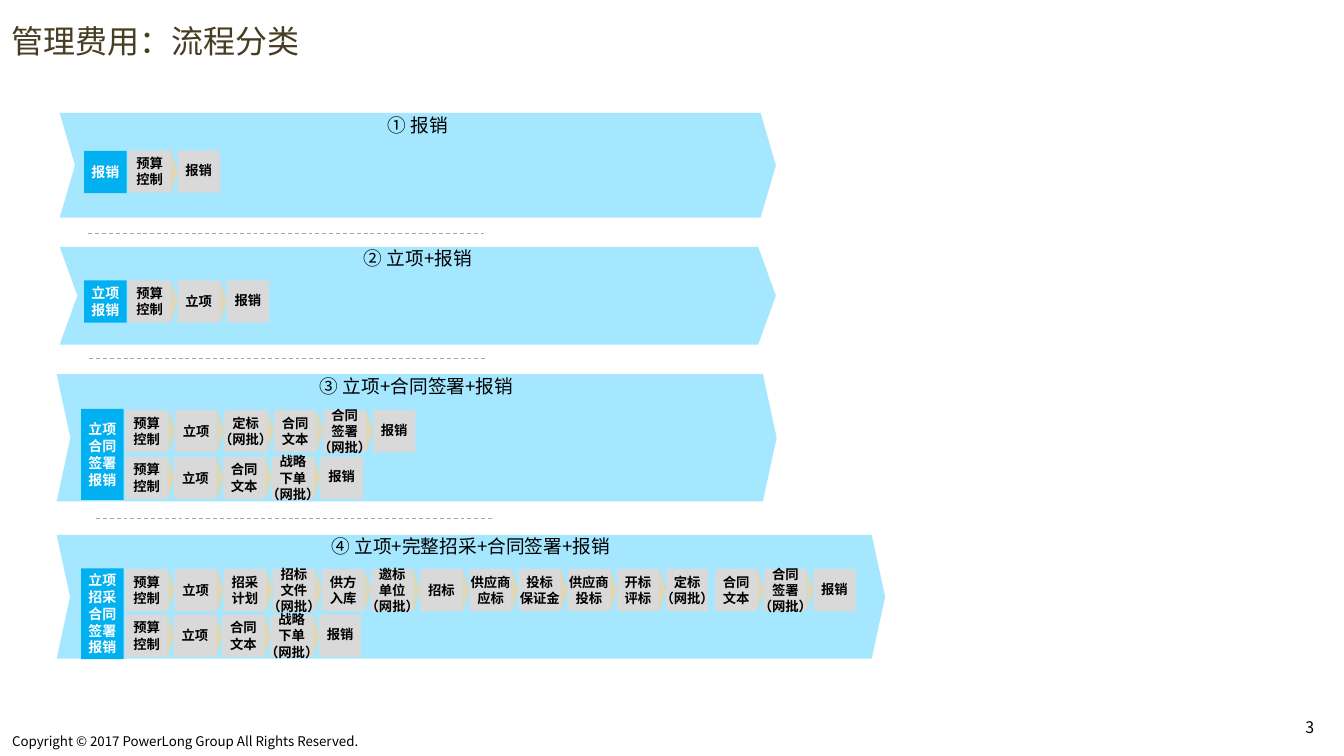
from dataclasses import dataclass

from lxml import etree
from pptx import Presentation
from pptx.dml.color import RGBColor
from pptx.enum.dml import MSO_LINE
from pptx.enum.shapes import MSO_CONNECTOR, MSO_SHAPE as Shape
from pptx.enum.text import MSO_ANCHOR as Anchor, PP_ALIGN as Align
from pptx.oxml.ns import qn
from pptx.util import Cm, Pt

FONT = "Noto Sans CJK SC"
BLACK = RGBColor(0x00, 0x00, 0x00)
WHITE = RGBColor(0xFF, 0xFF, 0xFF)
BROWN = RGBColor(0x47, 0x3D, 0x22)
PALE_BLUE = RGBColor(0xA5, 0xE7, 0xFF)
BLUE = RGBColor(0x00, 0xB0, 0xF0)
GREY = RGBColor(0xD9, 0xD9, 0xD9)
SAND = RGBColor(0xE0, 0xD6, 0xB8)
DASH_GREY = RGBColor(0xA6, 0xA6, 0xA6)

SLIDE_WIDTH = 35.56
SLIDE_HEIGHT = SLIDE_WIDTH * 9 / 16
BOX = 1.12          # side of a step box, cm
ARROW = 0.18        # thickness of the arrow between steps
LABEL_INDENT = 0.65
STEP_INDENT = 1.17


@dataclass
class Row:
    """A chain of steps; no arrow follows the steps listed in gaps."""
    top: float
    pitch: float
    steps: list[str]
    gaps: tuple[int, ...] = ()


@dataclass
class Band:
    title: str
    left: float
    top: float
    width: float
    height: float
    notch: float
    label: str
    label_top: float
    label_height: float
    rows: list[Row]


@dataclass
class Divider:
    left: float
    top: float


BUDGET, CONTRACT, SIGN = "预算\n控制", "合同\n文本", "合同\n签署\n（网批）"
AWARD = "定标\n（网批）"
STRATEGIC = [BUDGET, "立项", CONTRACT, "战略\n下单\n（网批）", "报销"]
FULL_TENDER = [
    BUDGET, "立项", "招采\n计划", "招标\n文件\n（网批）", "供方\n入库",
    "邀标\n单位\n（网批）", "招标", "供应商\n应标", "投标\n保证金",
    "供应商\n投标", "开标\n评标", AWARD, CONTRACT, SIGN, "报销",
]

BANDS = [
    Band("① 报销", 1.58, 2.99, 18.95, 2.77, 0.146, "报销", 3.99, BOX,
         [Row(3.98, 1.3, [BUDGET, "报销"])]),
    Band("② 立项+报销", 1.58, 6.53, 18.95, 2.59, 0.181, "立项\n报销", 7.42, BOX,
         [Row(7.42, 1.3, [BUDGET, "立项", "报销"])]),
    Band("③ 立项+合同签署+报销", 1.5, 9.9, 19.05, 3.37, 0.108,
         "立项\n合同\n签署\n报销", 10.82, 2.41,
         [Row(10.85, 1.31, [BUDGET, "立项", AWARD, CONTRACT, SIGN, "报销"]),
          Row(12.08, 1.29, STRATEGIC)]),
    Band("④ 立项+完整招采+合同签署+报销", 1.5, 14.15, 21.92, 3.28, 0.108,
         "立项\n招采\n合同\n签署\n报销", 15.04, 2.4,
         [Row(15.06, 1.3, FULL_TENDER, gaps=(FULL_TENDER.index(AWARD),)),
          Row(16.26, 1.28, STRATEGIC)]),
]
DIVIDERS = [Divider(2.34, 6.17), Divider(2.36, 9.49), Divider(2.54, 13.73)]
DIVIDER_WIDTH = 10.49


def write(sp, text: str, *, size: float, color: RGBColor = BLACK,
          bold: bool = False, align=Align.LEFT, anchor=Anchor.TOP,
          spacing: float = 1.0, wrap: bool = True, inset=None) -> None:
    """Fill a shape with one paragraph per line of text."""
    tf = sp.text_frame
    tf.word_wrap = wrap
    tf.vertical_anchor = anchor
    if inset:
        tf.margin_left = tf.margin_right = Cm(inset[0])
        tf.margin_top = tf.margin_bottom = Cm(inset[1])
    for i, line in enumerate(text.split("\n")):
        p = tf.paragraphs[0] if i == 0 else tf.add_paragraph()
        p.alignment = align
        p.line_spacing = spacing
        r = p.add_run()
        r.text = line
        r.font.name, r.font.size, r.font.bold = FONT, Pt(size), bold
        r.font.color.rgb = color
        ea = etree.SubElement(r.font._element, qn("a:ea"))
        ea.set("typeface", FONT)


def add_shape(s, kind: Shape, left: float, top: float, width: float,
              height: float, fill: RGBColor):
    sp = s.shapes.add_shape(kind, Cm(left), Cm(top), Cm(width), Cm(height))
    sp.shadow.inherit = False
    sp.fill.solid()
    sp.fill.fore_color.rgb = fill
    sp.line.fill.background()
    return sp


def add_text(s, text: str, left: float, top: float, width: float,
             height: float, **style) -> None:
    sp = s.shapes.add_textbox(Cm(left), Cm(top), Cm(width), Cm(height))
    write(sp, text, **style)


def draw_row(s, row: Row, left: float) -> None:
    for i, step in enumerate(row.steps):
        sp = add_shape(s, Shape.RECTANGLE, left + i * row.pitch, row.top,
                       BOX, BOX, GREY)
        write(sp, step, size=10, bold=True, align=Align.CENTER,
              anchor=Anchor.MIDDLE, wrap=False,
              spacing=0.8 if step == "报销" else 1.0)
    # Arrows are centred on the gaps between neighbouring boxes
    for i in range(len(row.steps) - 1):
        if i not in row.gaps:
            sp = add_shape(s, Shape.ISOSCELES_TRIANGLE,
                           left + (i + 0.5) * row.pitch,
                           row.top + (BOX - ARROW) / 2, BOX, ARROW, SAND)
            sp.rotation = 90


def draw_band(s, band: Band) -> None:
    sp = add_shape(s, Shape.CHEVRON, band.left, band.top, band.width,
                   band.height, PALE_BLUE)
    sp.adjustments[0] = band.notch
    write(sp, band.title, size=14, align=Align.CENTER, spacing=0.8)

    label_left = band.left + LABEL_INDENT
    sp = add_shape(s, Shape.RECTANGLE, label_left, band.label_top, BOX,
                   band.label_height, BLUE)
    write(sp, band.label, size=10.5, color=WHITE, bold=True,
          align=Align.CENTER, anchor=Anchor.MIDDLE, wrap=False)
    for row in band.rows:
        draw_row(s, row, label_left + STEP_INDENT)


def draw_divider(s, d: Divider) -> None:
    ln = s.shapes.add_connector(MSO_CONNECTOR.STRAIGHT, Cm(d.left), Cm(d.top),
                                Cm(d.left + DIVIDER_WIDTH), Cm(d.top))
    ln.line.color.rgb = DASH_GREY
    ln.line.width = Pt(0.75)
    ln.line.dash_style = MSO_LINE.DASH
    etree.SubElement(ln._element.spPr, qn("a:effectLst"))


def main() -> None:
    prs = Presentation()
    prs.slide_width, prs.slide_height = Cm(SLIDE_WIDTH), Cm(SLIDE_HEIGHT)
    s = prs.slides.add_slide(prs.slide_layouts[6])

    # Title and footer
    add_text(s, "管理费用：流程分类", 0, 0, SLIDE_WIDTH, 2.16, size=24,
             color=BROWN, anchor=Anchor.MIDDLE, inset=(0.3, 0.15))
    add_text(s, "Copyright © 2017 PowerLong Group All Rights Reserved.",
             0, 19.34, 12.52, 0.66, size=10, spacing=0.8, inset=(0.32, 0.15))
    add_text(s, "3", 34.29, 18.97, 1.27, 1.03, size=12, spacing=0.8)

    # Process bands and the dashed lines between them
    for band in BANDS:
        draw_band(s, band)
    for divider in DIVIDERS:
        draw_divider(s, divider)

    prs.save("out.pptx")


if __name__ == "__main__":
    main()
